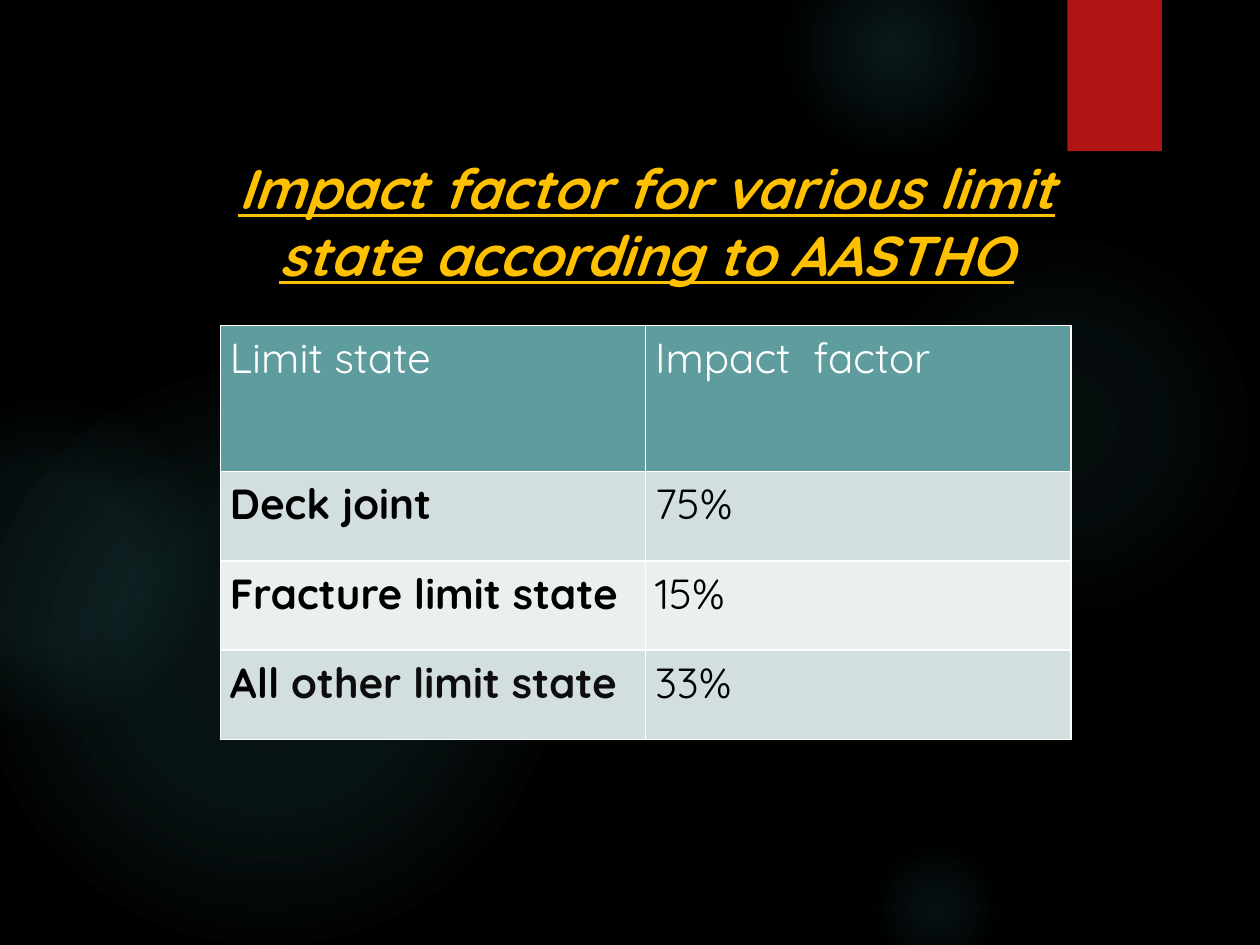
"""Build a slide with a table of impact factors for each limit state."""
import pptx
import pptx.dml.color
import pptx.enum.shapes
import pptx.enum.text
import pptx.oxml
import pptx.oxml.ns
import pptx.util

Pt = pptx.util.Pt
RGBColor = pptx.dml.color.RGBColor
Shape = pptx.enum.shapes.MSO_SHAPE

BLACK = RGBColor(0x00, 0x00, 0x00)
NEAR_BLACK = RGBColor(0x0D, 0x0D, 0x0D)
WHITE = RGBColor(0xFF, 0xFF, 0xFF)
GLOW = RGBColor(0x50, 0xB9, 0xC1)
RED = RGBColor(0xB0, 0x15, 0x13)
GOLD = RGBColor(0xFF, 0xC0, 0x00)
TEAL = RGBColor(0x5F, 0x9C, 0x9D)
BAND_DARK = RGBColor(0xD2, 0xDE, 0xDF)
BAND_LIGHT = RGBColor(0xEA, 0xEF, 0xEF)


def color_xml(color, percent):
    return f'<a:srgbClr val="{color}"><a:alpha val="{percent * 1000}"/></a:srgbClr>'


def element(xml):
    tag_end = xml.index(">")
    if xml[tag_end - 1] == "/":
        tag_end -= 1
    namespace = pptx.oxml.ns.nsdecls("a")
    return pptx.oxml.parse_xml(f"{xml[:tag_end]} {namespace}{xml[tag_end:]}")


class SlideBuilder:
    def __init__(self, slide, font):
        self.slide = slide
        self.font = font

    def background(self, color):
        self.slide.background.fill.solid()
        self.slide.background.fill.fore_color.rgb = color

    def shape(self, kind, left, top, width, height, color):
        body = self.slide.shapes.add_shape(kind, Pt(left), Pt(top), Pt(width), Pt(height))
        body.shadow.inherit = False
        body.fill.solid()
        body.fill.fore_color.rgb = color
        body.line.fill.background()
        return body

    def glow(self, left, top, size, stops):
        circle = self.shape(Shape.OVAL, left, top, size, size, GLOW)
        stop_xml = "".join(
            f'<a:gs pos="{position * 1000}">{color_xml(GLOW, alpha)}</a:gs>'
            for position, alpha in stops)
        gradient = element(
            f'<a:gradFill rotWithShape="1"><a:gsLst>{stop_xml}</a:gsLst><a:path path="circle">'
            '<a:fillToRect l="50000" t="50000" r="50000" b="50000"/></a:path></a:gradFill>')
        properties = circle._element.spPr
        properties.replace(properties.find(pptx.oxml.ns.qn("a:solidFill")), gradient)

    def ribbon(self, left, top, width, height):
        ribbon = self.shape(Shape.RECTANGLE, left, top, width, height, RED)
        effects = ribbon._element.spPr.find(pptx.oxml.ns.qn("a:effectLst"))
        effects.append(element(
            f'<a:outerShdw blurRad="{Pt(3)}" dist="{Pt(2)}" dir="5400000" rotWithShape="0">'
            f'{color_xml(BLACK, 45)}</a:outerShdw>'))

    def format_run(self, run, size, color, bold=False):
        run.font.name = self.font
        run.font.size = Pt(size)
        run.font.color.rgb = color
        run.font.bold = bold

    def title(self, text, left, top, width, height):
        box = self.slide.shapes.add_textbox(Pt(left), Pt(top), Pt(width), Pt(height))
        box.text_frame.word_wrap = True
        box.text_frame.text = text
        paragraph = box.text_frame.paragraphs[0]
        paragraph.alignment = pptx.enum.text.PP_ALIGN.CENTER
        run = paragraph.runs[0]
        self.format_run(run, 32, GOLD, bold=True)
        run.font.italic = True
        run.font.underline = True

    def cell(self, cell, text, fill, color, bold):
        cell.margin_left = cell.margin_right = Pt(5.4)
        cell.margin_top = cell.margin_bottom = Pt(3.6)
        cell.text_frame.text = text
        self.format_run(cell.text_frame.paragraphs[0].runs[0], 24, color, bold)
        cell.fill.solid()
        cell.fill.fore_color.rgb = fill
        for index, side in enumerate(("lnL", "lnR", "lnT", "lnB")):
            cell._tc.get_or_add_tcPr().insert(index, element(
                f'<a:{side} w="{Pt(1)}"><a:solidFill>{color_xml(WHITE, 100)}'
                f'</a:solidFill></a:{side}>'))

    def table(self, rows, left, top, column_width, heights):
        columns = len(rows[0])
        table = self.slide.shapes.add_table(
            len(rows), columns, Pt(left), Pt(top),
            Pt(column_width * columns), Pt(sum(heights))).table
        for column in table.columns:
            column.width = Pt(column_width)
        for r, (texts, height) in enumerate(zip(rows, heights)):
            table.rows[r].height = Pt(height)
            header = r == 0
            fill = TEAL if header else (BAND_LIGHT, BAND_DARK)[r % 2]
            color = WHITE if header else BLACK
            for c, text in enumerate(texts):
                self.cell(table.cell(r, c), text, fill, color, bold=not header and c == 0)
        return table


def main():
    presentation = pptx.Presentation()
    presentation.slide_width = Pt(720)
    presentation.slide_height = Pt(540)
    builder = SlideBuilder(
        presentation.slides.add_slide(presentation.slide_layouts[6]), "Quicksand")
    builder.background(BLACK)

    glows = (
        (496, 132, 222, ((0, 7), (36, 6), (69, 0))),
        (448, -36, 126, ((0, 14), (36, 7), (73, 0))),
        (496, 480, 78, ((0, 9), (36, 5), (66, 0))),
        (-12, 210, 330, ((0, 11), (36, 10), (75, 0))),
        (-66, 228, 186, ((0, 8), (36, 8), (72, 0))),
    )
    for glow in glows:
        builder.glow(*glow)
    builder.ribbon(610, 0, 54, 86.4)

    limit_states = builder.table(
        (("Limit state", "Impact  factor"),
         ("Deck joint", "75%"),
         ("Fracture limit state", "15%"),
         ("All ", "33%")),
        126, 186, 243, (83.5, 51, 51, 51))
    other_states = limit_states.cell(3, 0).text_frame.paragraphs[0].add_run()
    other_states.text = "other limit state"
    builder.format_run(other_states, 24, NEAR_BLACK, bold=True)

    builder.title("Impact factor for various limit state according to AASTHO",
                  85, 84.2, 569, 85)
    presentation.save("out.pptx")


if __name__ == "__main__":
    main()
